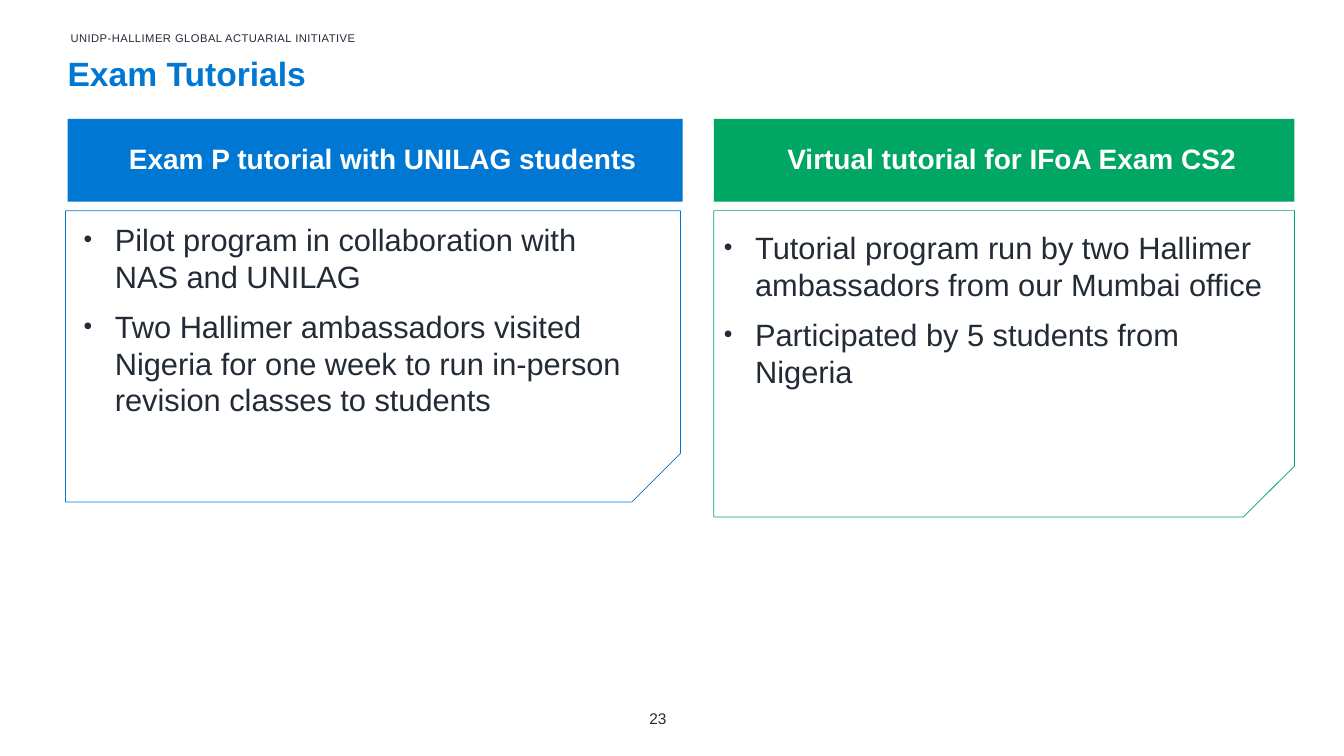
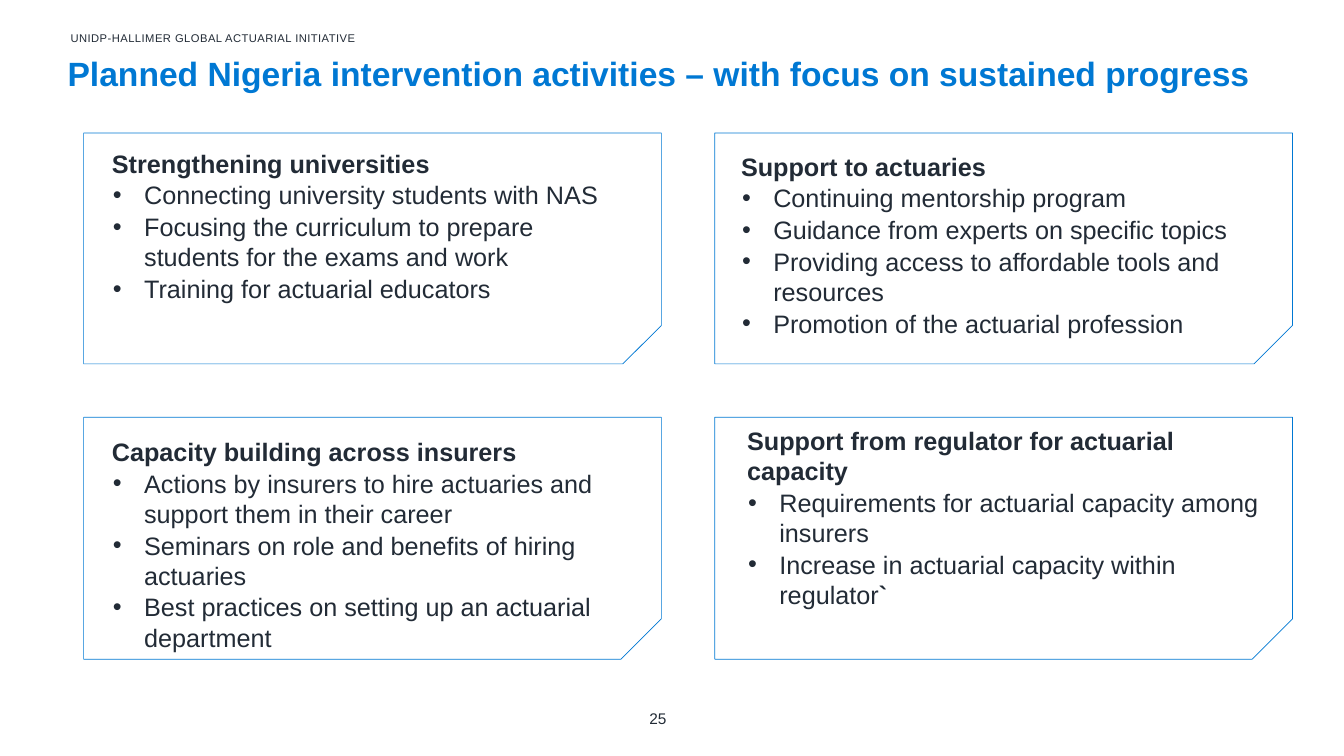
from lxml import etree
from pptx import Presentation
from pptx.dml.color import RGBColor
from pptx.enum.shapes import MSO_SHAPE
from pptx.enum.text import MSO_ANCHOR, MSO_AUTO_SIZE, PP_ALIGN
from pptx.oxml.ns import qn
from pptx.util import Inches, Pt

RECTANGLE, SNIPPED = MSO_SHAPE.RECTANGLE, MSO_SHAPE.SNIP_1_RECTANGLE
TOP, MIDDLE, BOTTOM = MSO_ANCHOR.TOP, MSO_ANCHOR.MIDDLE, MSO_ANCHOR.BOTTOM
LEFT, CENTER, RIGHT = PP_ALIGN.LEFT, PP_ALIGN.CENTER, PP_ALIGN.RIGHT

COLORS = {"blue": "0078D3", "green": "00A663", "ink": "222B36", "white": "FFFFFF"}
FONT = "Arial"
HANGING = 0.31

SECTION = "UNIDP-HALLIMER GLOBAL ACTUARIAL INITIATIVE"

TUTORIALS = {
    "title": "Exam Tutorials",
    "number": "23",
    "columns": [
        {
            "heading": "Exam P tutorial with UNILAG students",
            "color": "blue",
            "band": (0.67, 1.18, 6.1, 0.82),
            "frame": (0.65, 2.09, 6.1, 2.89),
            "text": (0.83, 2.19, 5.56, 2.79),
            "bullets": [
                "Pilot program in collaboration with NAS and UNILAG",
                "Two Hallimer ambassadors visited Nigeria for one week to run "
                "in-person revision classes to students",
            ],
        },
        {
            "heading": "Virtual tutorial for IFoA Exam CS2",
            "color": "green",
            "band": (7.08, 1.18, 5.76, 0.82),
            "frame": (7.08, 2.09, 5.76, 3.04),
            "text": (7.18, 2.27, 5.51, 2.12),
            "bullets": [
                "Tutorial program run by two Hallimer ambassadors from our Mumbai office",
                "Participated by 5 students from Nigeria",
            ],
        },
    ],
}

# A bullet given as a tuple has a bold ending.
ACTIVITIES = {
    "title": "Planned Nigeria intervention activities – with focus on sustained progress",
    "number": "25",
    "card_lefts": (0.83, 7.09),
    "card_width": 5.73,
    "card_rows": ((1.32, 2.29), (4.14, 2.4)),
    "cards": [
        {
            "heading": "Strengthening universities",
            "text": (1.1, 1.47, 4.91, 1.56),
            "bullets": [
                "Connecting university students with NAS",
                "Focusing the curriculum to prepare students for the exams and work",
                "Training for actuarial educators",
            ],
        },
        {
            "heading": "Support to actuaries",
            "text": (7.34, 1.5, 5.07, 1.87),
            "bullets": [
                "Continuing mentorship program",
                "Guidance from experts on specific topics",
                "Providing access to affordable tools and resources",
                "Promotion of the actuarial profession",
            ],
        },
        {
            "heading": "Capacity building across insurers",
            "text": (1.1, 4.33, 5.57, 2.2),
            "bullets": [
                "Actions by insurers to hire actuaries and support them in their career",
                "Seminars on role and benefits of hiring actuaries",
                "Best practices on setting up an actuarial department",
            ],
        },
        {
            "heading": "Support from regulator for actuarial capacity",
            "text": (7.4, 4.22, 5.11, 1.85),
            "bullets": [
                "Requirements for actuarial capacity among insurers",
                ("Increase in actuarial capacity within regulator", "`"),
            ],
        },
    ],
}


def color(name):
    return RGBColor.from_string(COLORS[name])


def inches(box):
    return [Inches(value) for value in box]


def set_frame(frame, anchor=TOP, insets=(0, 0, 0, 0)):
    frame.word_wrap = True
    frame.auto_size = MSO_AUTO_SIZE.NONE
    frame.vertical_anchor = anchor
    (frame.margin_left, frame.margin_top,
     frame.margin_right, frame.margin_bottom) = inches(insets)


def set_paragraph(paragraph, size, ink="ink", bold=False, align=LEFT, spacing=None):
    paragraph.alignment = align
    if spacing:
        paragraph.line_spacing = spacing
    font = paragraph.font
    font.name, font.size, font.bold = FONT, Pt(size), bold
    font.color.rgb = color(ink)


def add_text_box(slide, box, anchor=TOP, insets=(0, 0, 0, 0)):
    frame = slide.shapes.add_textbox(*inches(box)).text_frame
    set_frame(frame, anchor, insets)
    return frame


def set_bullet(paragraph, indent, percent):
    properties = paragraph._p.get_or_add_pPr()
    properties.set("marL", str(Inches(indent)))
    properties.set("indent", str(-Inches(HANGING)))
    bullet_color = etree.SubElement(properties, qn("a:buClr"))
    etree.SubElement(bullet_color, qn("a:srgbClr"), val=COLORS["ink"])
    etree.SubElement(properties, qn("a:buSzPct"), val=str(percent * 1000))
    etree.SubElement(properties, qn("a:buFont"), typeface=FONT)
    etree.SubElement(properties, qn("a:buChar"), char="•")


def add_list(slide, box, bullets, size, gap, indent, percent=100, heading=None):
    """Add a bullet list, with an optional bold heading above it."""
    frame = add_text_box(slide, box)
    lines = ([heading] if heading else []) + bullets
    for index, line in enumerate(lines):
        paragraph = frame.paragraphs[0] if index == 0 else frame.add_paragraph()
        text, bold_ending = line if isinstance(line, tuple) else (line, "")
        paragraph.add_run().text = text
        if bold_ending:
            run = paragraph.add_run()
            run.text = bold_ending
            run.font.bold = True
        is_heading = bool(heading) and index == 0
        if is_heading:
            paragraph._p.get_or_add_pPr().set("marL", str(Inches(0.01)))
        else:
            set_bullet(paragraph, indent, percent)
        if index:
            paragraph.space_before = Pt(gap)
        set_paragraph(paragraph, size, bold=is_heading)


def add_snipped_frame(slide, box, line):
    """Outline a box whose bottom right corner is cut off."""
    shape = slide.shapes.add_shape(SNIPPED, *inches(box))
    shape.shadow.inherit = False
    shape.fill.background()
    shape.line.color.rgb = color(line)
    shape.line.width = Pt(0.5)
    shape._element.spPr.find(qn("a:xfrm")).set("flipV", "1")


def add_band(slide, box, text, fill):
    shape = slide.shapes.add_shape(RECTANGLE, *inches(box))
    shape.shadow.inherit = False
    shape.fill.solid()
    shape.fill.fore_color.rgb = color(fill)
    shape.line.fill.background()
    set_frame(shape.text_frame, MIDDLE, (0.25, 0.05, 0.1, 0.05))
    shape.text_frame.text = text
    set_paragraph(shape.text_frame.paragraphs[0], 20, "white", True, CENTER, 0.9)


def add_slide(presentation, content):
    """Add a slide with its title, section line and page number."""
    slide = presentation.slides.add_slide(presentation.slide_layouts[5])
    title = slide.shapes.title
    title.left, title.top, title.width, title.height = inches((0.67, 0.57, 12.07, 0.36))
    set_frame(title.text_frame)
    title.text_frame.text = content["title"]
    set_paragraph(title.text_frame.paragraphs[0], 24, "blue", True, spacing=0.9)

    section = add_text_box(slide, (0.67, 0.31, 12.07, 0.13), insets=(0.03, 0, 0, 0))
    section.text = SECTION
    set_paragraph(section.paragraphs[0], 8)
    section.paragraphs[0].runs[0]._r.get_or_add_rPr().set("spc", "30")

    number = add_text_box(slide, (5.97, 7.03, 0.64, 0.19), BOTTOM)
    number.text = content["number"]
    set_paragraph(number.paragraphs[0], 11, align=RIGHT)
    return slide


def add_tutorials(presentation):
    slide = add_slide(presentation, TUTORIALS)
    for column in TUTORIALS["columns"]:
        add_snipped_frame(slide, column["frame"], column["color"])
        add_list(slide, column["text"], column["bullets"], 22, 9, HANGING, 80)
        add_band(slide, column["band"], column["heading"], column["color"])


def add_activities(presentation):
    slide = add_slide(presentation, ACTIVITIES)
    lefts = ACTIVITIES["card_lefts"]
    for index, card in enumerate(ACTIVITIES["cards"]):
        row, column = divmod(index, len(lefts))
        top, height = ACTIVITIES["card_rows"][row]
        add_snipped_frame(slide, (lefts[column], top, ACTIVITIES["card_width"], height), "blue")
        add_list(slide, card["text"], card["bullets"], 18, 1, 0.33, heading=card["heading"])


def main():
    presentation = Presentation()
    presentation.slide_width, presentation.slide_height = Inches(13.33), Inches(7.5)
    add_tutorials(presentation)
    add_activities(presentation)
    presentation.save("out.pptx")


if __name__ == "__main__":
    main()
